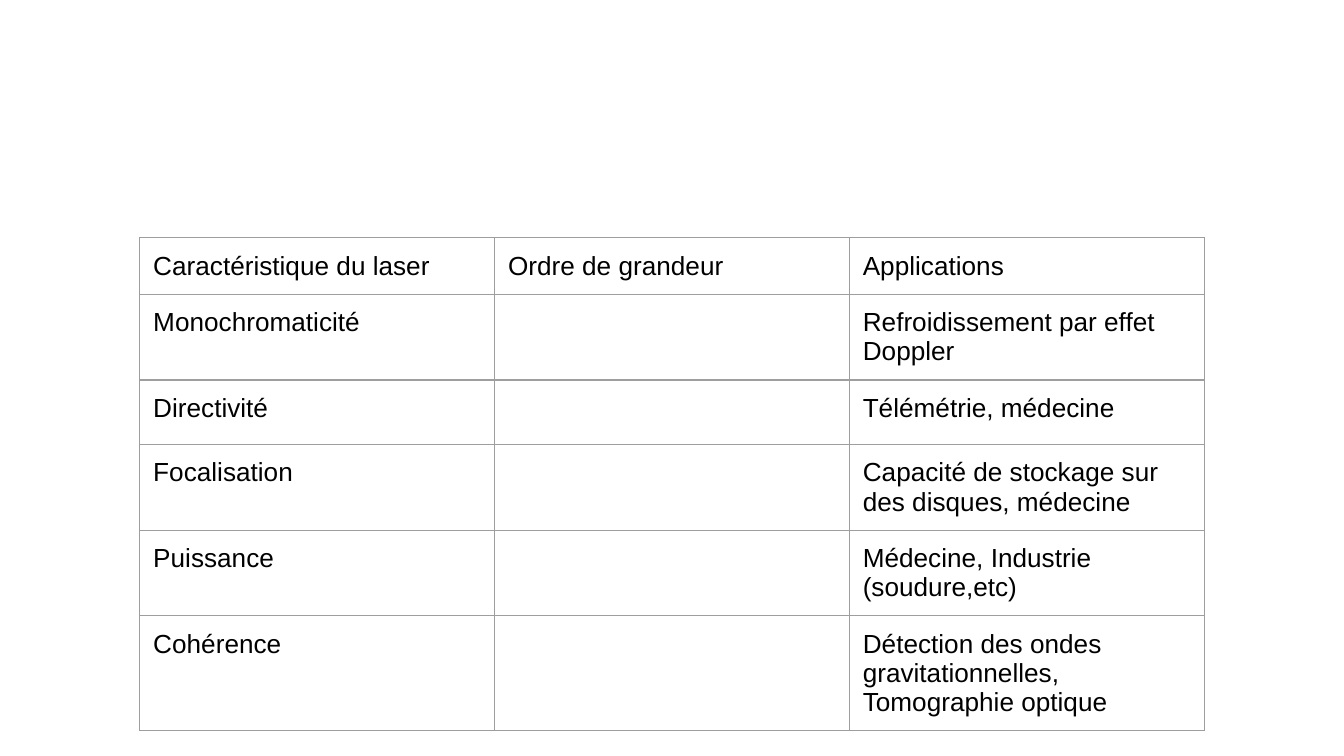
import pptx
import pptx.dml.color
import pptx.oxml
import pptx.oxml.ns
import pptx.util
from pptx.util import Inches

BLACK = pptx.dml.color.RGBColor(0x00, 0x00, 0x00)
BORDER_GREY = pptx.dml.color.RGBColor(0x9E, 0x9E, 0x9E)
BORDER_WIDTH = pptx.util.Pt(0.75)
CELL_MARGIN = Inches(0.1)
CELL_FORMAT = {
    "margin_left": CELL_MARGIN,
    "margin_right": CELL_MARGIN,
    "margin_top": CELL_MARGIN,
    "margin_bottom": CELL_MARGIN,
}
FONT_NAME = "Arial"
FONT_FORMAT = {"name": FONT_NAME, "size": pptx.util.Pt(14)}

LASER_ROWS = [
    ("Caractéristique du laser", "Ordre de grandeur", "Applications"),
    ("Monochromaticité", "", "Refroidissement par effet Doppler"),
    ("Directivité", "", "Télémétrie, médecine"),
    ("Focalisation", "", "Capacité de stockage sur des disques, médecine"),
    ("Puissance", "", "Médecine, Industrie (soudure,etc)"),
    ("Cohérence", "", "Détection des ondes gravitationnelles, Tomographie optique"),
]


def set_format(target, values):
    for attribute, value in values.items():
        setattr(target, attribute, value)


def add_borders(cell):
    """Outline all four sides; border lines must precede the fill in tcPr."""
    properties = cell._tc.get_or_add_tcPr()
    for position, side in enumerate(("lnL", "lnR", "lnT", "lnB")):
        border = pptx.oxml.parse_xml(
            f'<a:{side} {pptx.oxml.ns.nsdecls("a")} w="{BORDER_WIDTH}">'
            f'<a:solidFill><a:srgbClr val="{BORDER_GREY}"/></a:solidFill>'
            f"</a:{side}>"
        )
        properties.insert(position, border)


def set_empty_font(paragraph):
    """Give an empty paragraph the line height of the table's font."""
    paragraph._p.append(pptx.oxml.parse_xml(
        f'<a:endParaRPr {pptx.oxml.ns.nsdecls("a")} sz="1800">'
        f'<a:latin typeface="{FONT_NAME}"/></a:endParaRPr>'
    ))


def fill_cell(cell, text):
    set_format(cell, CELL_FORMAT)
    cell.fill.background()
    add_borders(cell)
    paragraph = cell.text_frame.paragraphs[0]
    if text:
        run = paragraph.add_run()
        run.text = text
        set_format(run.font, FONT_FORMAT)
        run.font.color.rgb = BLACK
    else:
        set_empty_font(paragraph)


def add_laser_table(slide, left, top, width, height):
    table = slide.shapes.add_table(
        len(LASER_ROWS), len(LASER_ROWS[0]), left, top, width, height
    ).table
    set_format(table, {"first_row": False, "horz_banding": False})
    for row, texts in zip(table.rows, LASER_ROWS):
        for cell, text in zip(row.cells, texts):
            fill_cell(cell, text)


def main():
    presentation = pptx.Presentation()
    presentation.slide_width = Inches(10)
    presentation.slide_height = presentation.slide_width * 9 // 16
    slide = presentation.slides.add_slide(presentation.slide_layouts[6])
    add_laser_table(slide, Inches(1.04), Inches(1.77), Inches(7.92), Inches(2.52))
    presentation.save("out.pptx")


if __name__ == "__main__":
    main()
